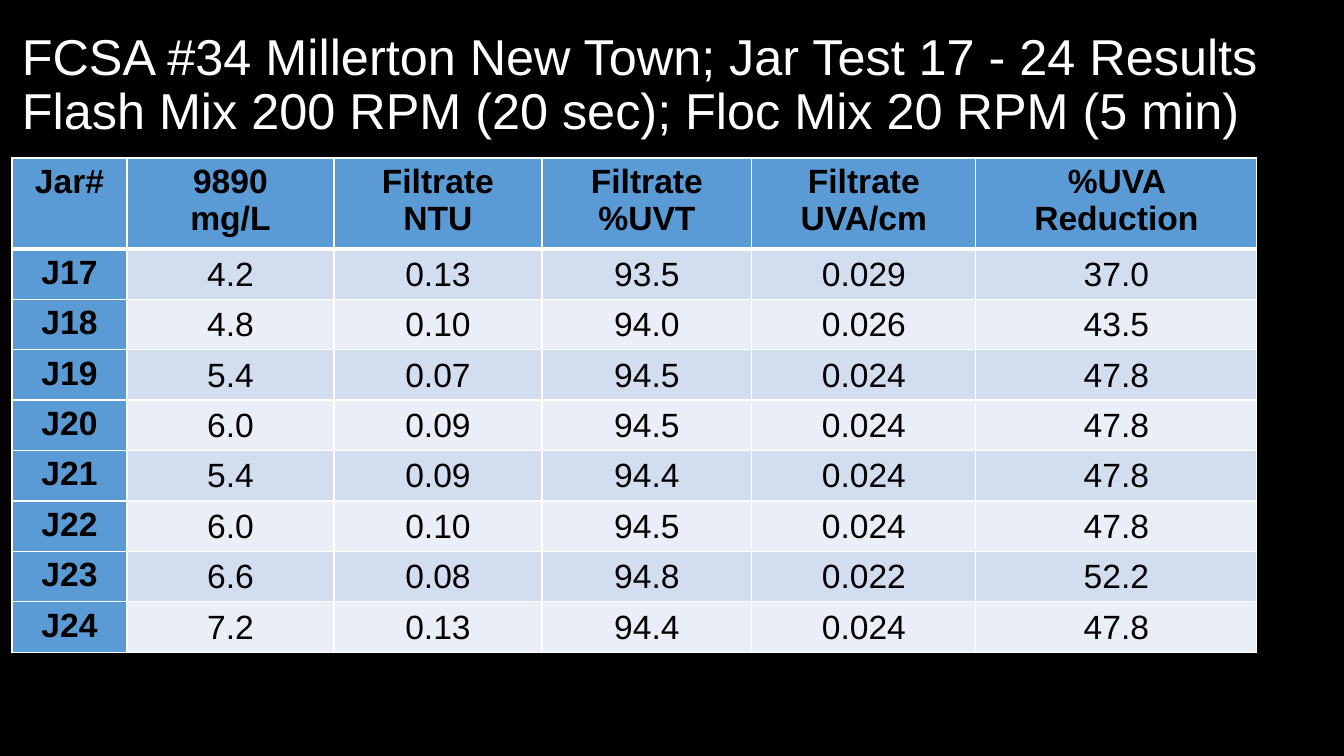
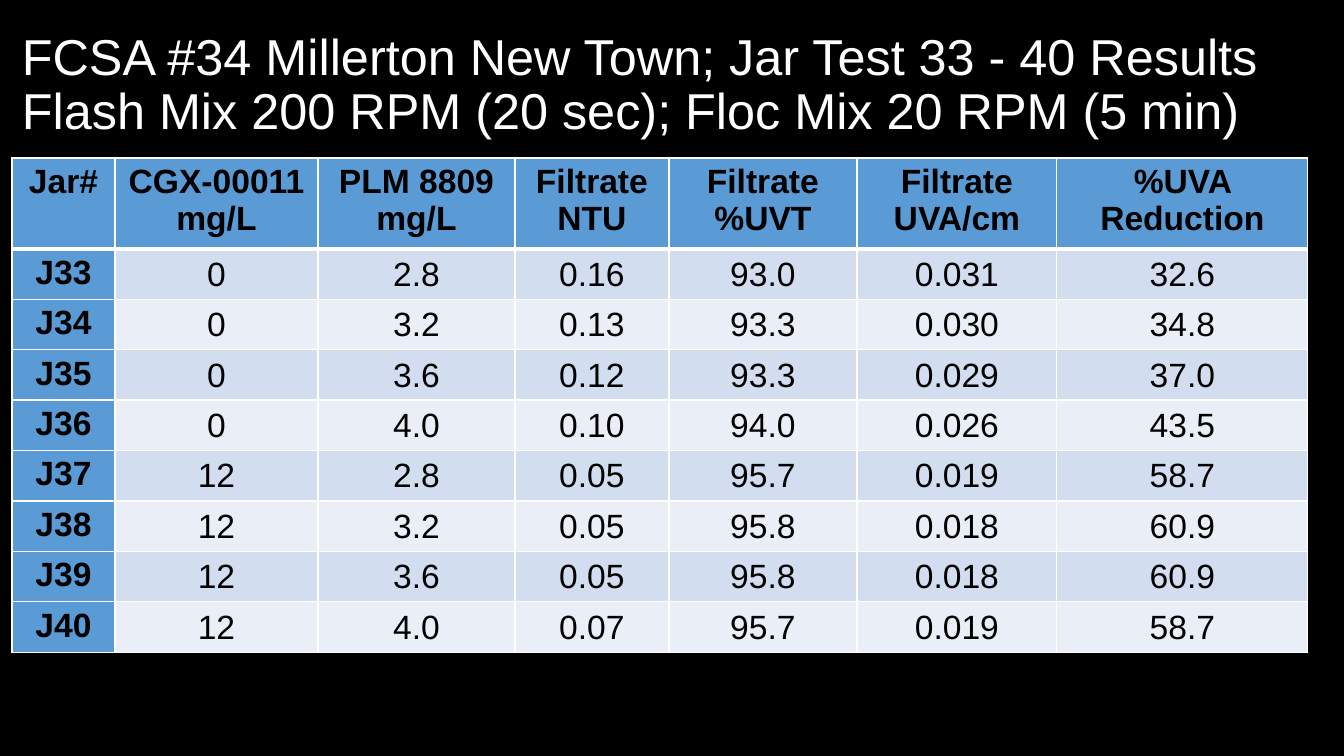
import lxml.etree
import pptx
import pptx.dml.color
import pptx.enum.text
import pptx.oxml.ns
import pptx.util

RGBColor = pptx.dml.color.RGBColor
BLACK = RGBColor(0x00, 0x00, 0x00)
WHITE = RGBColor(0xFF, 0xFF, 0xFF)
HEADER_BLUE = RGBColor(0x5B, 0x9B, 0xD5)
BANDS = (RGBColor(0xD2, 0xDE, 0xEF), RGBColor(0xEA, 0xEF, 0xF7))

TITLE = (
    "FCSA #34 Millerton New Town; Jar Test {} Results\v"
    "Flash Mix 200 RPM (20 sec); Floc Mix 20 RPM (5 min)"
)
FILTRATE_HEADS = ["Filtrate\nNTU", "Filtrate\n%UVT", "Filtrate\nUVA/cm", "%UVA Reduction"]

JAR_TESTS = [
    {
        "jars": "17 - 24",
        "heads": ["Jar#", "9890\nmg/L", *FILTRATE_HEADS],
        "widths": [115, 207, 208, 210, 224, 281],
        "results": [
            ("J17", "4.2", "0.13", "93.5", "0.029", "37.0"),
            ("J18", "4.8", "0.10", "94.0", "0.026", "43.5"),
            ("J19", "5.4", "0.07", "94.5", "0.024", "47.8"),
            ("J20", "6.0", "0.09", "94.5", "0.024", "47.8"),
            ("J21", "5.4", "0.09", "94.4", "0.024", "47.8"),
            ("J22", "6.0", "0.10", "94.5", "0.024", "47.8"),
            ("J23", "6.6", "0.08", "94.8", "0.022", "52.2"),
            ("J24", "7.2", "0.13", "94.4", "0.024", "47.8"),
        ],
    },
    {
        "jars": "33 - 40",
        "heads": ["Jar#", "CGX-00011\nmg/L", "PLM 8809\nmg/L", *FILTRATE_HEADS],
        "widths": [103, 203, 197, 154, 188, 200, 251],
        "results": [
            ("J33", "0", "2.8", "0.16", "93.0", "0.031", "32.6"),
            ("J34", "0", "3.2", "0.13", "93.3", "0.030", "34.8"),
            ("J35", "0", "3.6", "0.12", "93.3", "0.029", "37.0"),
            ("J36", "0", "4.0", "0.10", "94.0", "0.026", "43.5"),
            ("J37", "12", "2.8", "0.05", "95.7", "0.019", "58.7"),
            ("J38", "12", "3.2", "0.05", "95.8", "0.018", "60.9"),
            ("J39", "12", "3.6", "0.05", "95.8", "0.018", "60.9"),
            ("J40", "12", "4.0", "0.07", "95.7", "0.019", "58.7"),
        ],
    },
]

EMU_PER_PX = 914400 / 100.8
SLIDE_WIDTH, SLIDE_HEIGHT = 1344, 756
LEFT = 12
TITLE_TOP, TITLE_WIDTH, TITLE_HEIGHT = 13, 1313, 146
TABLE_TOP, HEAD_HEIGHT, RESULT_HEIGHT = 158, 84, 47


def px(length):
    return pptx.util.Emu(round(length * EMU_PER_PX))


TITLE_FONT = {"name": "Arial", "size": pptx.util.Pt(36)}
LABEL_FONT = {"name": "Arial", "size": pptx.util.Pt(24), "bold": True}
VALUE_FONT = {**LABEL_FONT, "bold": False}
VALUE_CELL = {
    "vertical_anchor": pptx.enum.text.MSO_ANCHOR.MIDDLE,
    "margin_left": px(1),
    "margin_right": px(1),
    "margin_top": px(1),
    "margin_bottom": px(0),
}


def apply_format(target, values):
    for attribute, value in values.items():
        setattr(target, attribute, value)


def style_text(frame, font, color, **paragraph_format):
    for paragraph in frame.paragraphs:
        apply_format(paragraph, paragraph_format)
        for run in paragraph.runs:
            apply_format(run.font, font)
            run.font.color.rgb = color


def add_borders(cell, points):
    """Draw white cell edges; points maps an edge letter (L, R, T, B) to its width."""
    properties = cell._tc.get_or_add_tcPr()
    qn = pptx.oxml.ns.qn
    for position, (edge, width) in enumerate(points.items()):
        line = lxml.etree.Element(qn(f"a:ln{edge}"), w=str(pptx.util.Pt(width)))
        fill = lxml.etree.SubElement(line, qn("a:solidFill"))
        lxml.etree.SubElement(fill, qn("a:srgbClr"), val=str(WHITE))
        properties.insert(position, line)


def add_title(slide, jars):
    title = slide.shapes.add_textbox(
        px(LEFT), px(TITLE_TOP), px(TITLE_WIDTH), px(TITLE_HEIGHT)
    ).text_frame
    title.word_wrap = True
    title.vertical_anchor = pptx.enum.text.MSO_ANCHOR.MIDDLE
    title.text = TITLE.format(jars)
    style_text(title, TITLE_FONT, WHITE, line_spacing=0.9)


def fill_cell(cell, text, row, column):
    is_label = row == 0 or column == 0
    cell.text = text
    cell.fill.solid()
    cell.fill.fore_color.rgb = HEADER_BLUE if is_label else BANDS[(row - 1) % 2]
    if not is_label:
        apply_format(cell, VALUE_CELL)
    style_text(
        cell.text_frame,
        LABEL_FONT if is_label else VALUE_FONT,
        BLACK,
        alignment=pptx.enum.text.PP_ALIGN.CENTER,
    )
    add_borders(cell, {"L": 1, "R": 1, "T": 3 if row == 1 else 1, "B": 3 if row == 0 else 1})


def add_results(slide, heads, widths, results):
    rows = [heads, *results]
    heights = [HEAD_HEIGHT] + [RESULT_HEIGHT] * len(results)
    table = slide.shapes.add_table(
        len(rows), len(heads), px(LEFT), px(TABLE_TOP), px(sum(widths)), px(sum(heights))
    ).table
    for column, width in zip(table.columns, widths):
        column.width = px(width)
    for table_row, height in zip(table.rows, heights):
        table_row.height = px(height)
    for r, texts in enumerate(rows):
        for c, text in enumerate(texts):
            fill_cell(table.cell(r, c), text, r, c)


def main():
    deck = pptx.Presentation()
    deck.slide_width, deck.slide_height = px(SLIDE_WIDTH), px(SLIDE_HEIGHT)
    for test in JAR_TESTS:
        slide = deck.slides.add_slide(deck.slide_layouts[6])
        slide.background.fill.solid()
        slide.background.fill.fore_color.rgb = BLACK
        add_title(slide, test["jars"])
        add_results(slide, test["heads"], test["widths"], test["results"])
    deck.save("out.pptx")


if __name__ == "__main__":
    main()
